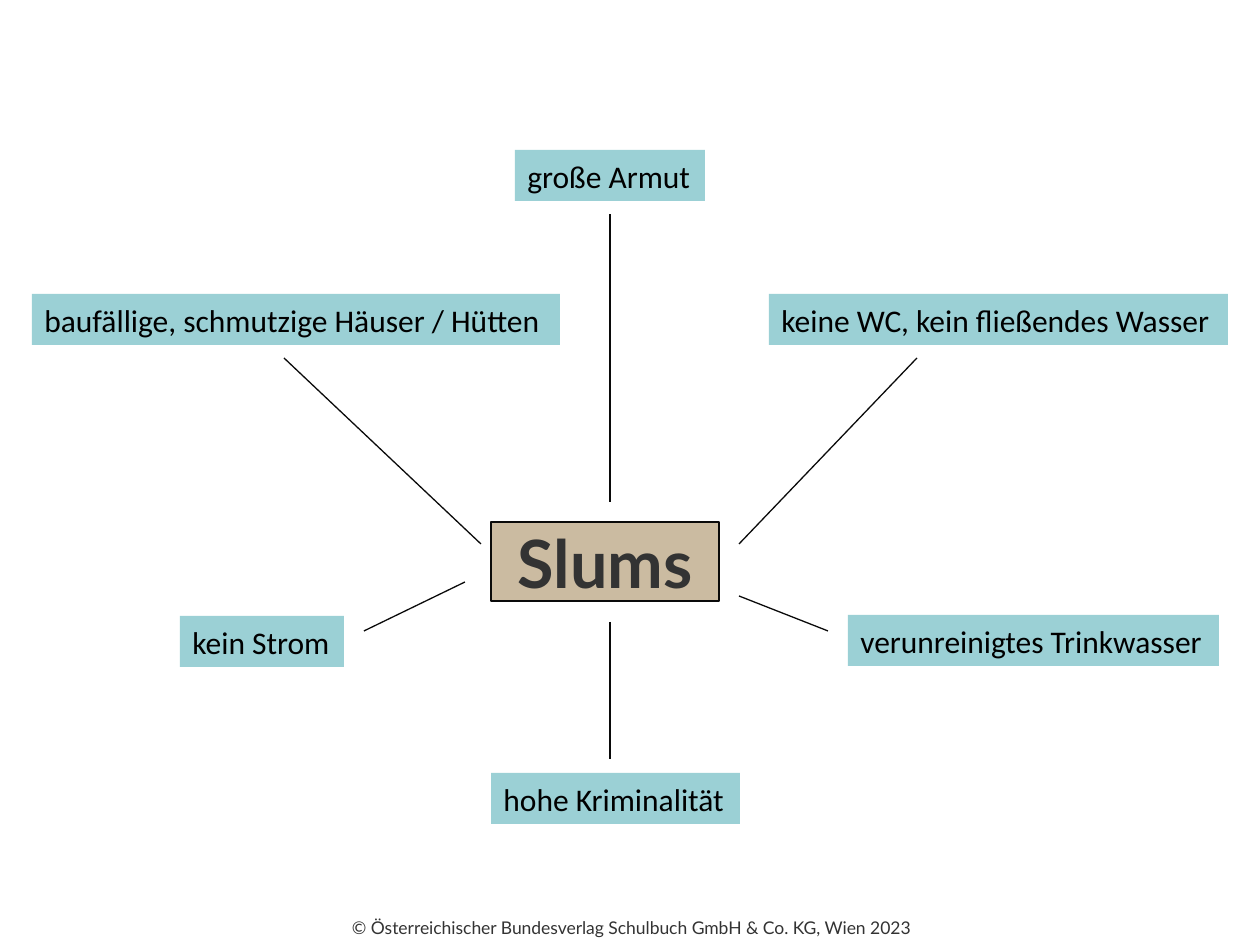
import pptx
import pptx.util
import pptx.dml.color
import pptx.enum.shapes
import pptx.enum.text
import pptx.oxml.ns
from lxml import etree

PX = 914400 // 126

THEME = {
    "topic": {"fill": "CBBBA1", "name": "Lato", "size": 38, "color": "333333", "bold": True},
    "node": {"fill": "9BD0D5", "name": "Calibri", "size": 18, "color": "000000", "bold": False},
    "footer": {"fill": None, "name": "Lato", "size": 10, "color": "333333", "bold": False},
    "line": "0A0A0A",
    "line_width": 0.75,
}

TOPIC = ("Slums", (491, 522, 228, 79))
FOOTER = ("© Österreichischer Bundesverlag Schulbuch GmbH & Co. KG, Wien 2023", (1, 911, 1260, 34))
NODE_HEIGHT = 51
# text, left, top, width, (line start near the topic, line end near the node)
NODES = [
    ("große Armut", 515, 150, 190, ((610, 502), (610, 214))),
    ("baufällige, schmutzige Häuser / Hütten", 32, 294, 528, ((481, 544), (284, 358))),
    ("keine WC, kein fließendes Wasser", 769, 294, 459, ((739, 544), (917, 358))),
    ("kein Strom", 180, 616, 164, ((465, 582), (364, 631))),
    ("verunreinigtes Trinkwasser", 848, 615, 371, ((739, 596), (828, 631))),
    ("hohe Kriminalität", 491, 773, 249, ((610, 622), (610, 759))),
]

ALIGN = pptx.enum.text.PP_ALIGN
ANCHOR = pptx.enum.text.MSO_ANCHOR


def rgb(value):
    return pptx.dml.color.RGBColor.from_string(value)


def style_line(line):
    line.color.rgb = rgb(THEME["line"])
    line.width = pptx.util.Pt(THEME["line_width"])


def place(s, box):
    for name, value in zip(("left", "top", "width", "height"), box):
        setattr(s, name, value * PX)


def write(s, text, style, align, anchor):
    """Fill a shape and set its single paragraph in one theme style."""
    if style["fill"]:
        s.fill.solid()
        s.fill.fore_color.rgb = rgb(style["fill"])
    tf = s.text_frame
    frame = {"word_wrap": True, "auto_size": pptx.enum.text.MSO_AUTO_SIZE.NONE,
             "vertical_anchor": anchor, "margin_right": 0 if align == ALIGN.LEFT else 12 * PX}
    for name, value in frame.items():
        setattr(tf, name, value)
    p = tf.paragraphs[0]
    p.alignment = align
    p.space_before = pptx.util.Pt(0)
    r = p.add_run()
    r.text = text
    for name in ("name", "bold"):
        setattr(r.font, name, style[name])
    r.font.size = pptx.util.Pt(style["size"])
    r.font.color.rgb = rgb(style["color"])


def add_node(slide, text, box):
    s = slide.shapes.add_shape(pptx.enum.shapes.MSO_SHAPE.RECTANGLE, *(v * PX for v in box))
    s.shadow.inherit = False
    s.line.fill.background()
    write(s, text, THEME["node"], ALIGN.LEFT, ANCHOR.MIDDLE)


def add_spoke(slide, start, end):
    s = slide.shapes.add_connector(pptx.enum.shapes.MSO_CONNECTOR.STRAIGHT,
                                   *(v * PX for v in start + end))
    style_line(s.line)
    etree.SubElement(s._element.spPr, pptx.oxml.ns.qn("a:effectLst"))


def main():
    prs = pptx.Presentation()
    prs.slide_width = pptx.util.Inches(10)
    prs.slide_height = pptx.util.Inches(7.5)
    slide = prs.slides.add_slide(prs.slide_layouts[5])

    text, box = FOOTER
    footer = slide.shapes.add_textbox(*(v * PX for v in box))
    write(footer, text, THEME["footer"], ALIGN.CENTER, ANCHOR.TOP)

    text, box = TOPIC
    title = slide.shapes.title
    place(title, box)
    style_line(title.line)
    write(title, text, THEME["topic"], ALIGN.CENTER, ANCHOR.MIDDLE)

    for text, left, top, width, spoke in NODES:
        add_node(slide, text, (left, top, width, NODE_HEIGHT))
        add_spoke(slide, *spoke)

    prs.save("out.pptx")


if __name__ == "__main__":
    main()
